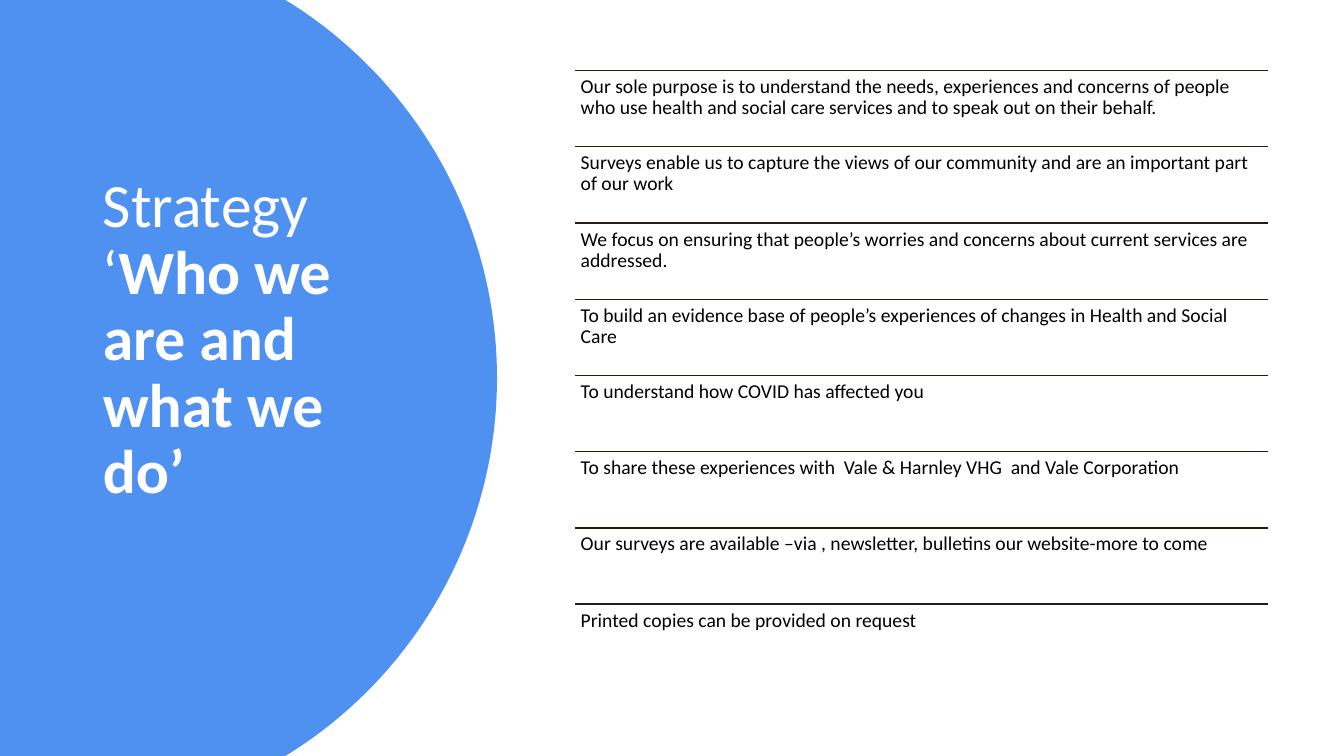
"""Build the strategy slide: title on a blue disc beside a ruled list of aims."""
import math

from lxml import etree
from pptx import Presentation
from pptx.dml.color import RGBColor
from pptx.enum.shapes import MSO_CONNECTOR
from pptx.enum.text import MSO_ANCHOR, MSO_AUTO_SIZE, PP_ALIGN
from pptx.oxml.ns import qn
from pptx.util import Pt

TITLE_RUNS = [("Strategy ‘", False), ("Who we are and what we do’", True)]
AIMS = [
    "Our sole purpose is to understand the needs, experiences and concerns of people who use health and social care services and to speak out on their behalf.",
    "Surveys enable us to capture the views of our community and are an important part of our work",
    "We focus on ensuring that people’s worries and concerns about current services are addressed.",
    "To build an evidence base of people’s experiences of changes in Health and Social Care",
    "To understand how COVID has affected you",
    "To share these experiences with  Vale & Harnley VHG  and Vale Corporation",
    "Our surveys are available –via , newsletter, bulletins our website-more to come",
    "Printed copies can be provided on request",
]
COLORS = {"disc": "4E91F0", "title": "FFFFFF", "text": "000000", "rule": "281B10"}
FONT = "Calibri"
STRAIGHT = MSO_CONNECTOR.STRAIGHT
LEFT = PP_ALIGN.LEFT
NO_FIT = MSO_AUTO_SIZE.NONE
MIDDLE, TOP = MSO_ANCHOR.MIDDLE, MSO_ANCHOR.TOP

EMU_PER_PX = 9144
SLIDE_W, SLIDE_H = 1333, 750
DISC_R, DISC_CX = 440, 53
ARC_STEPS = 80
TITLE_BOX = (92, 70, 323, 609)
TITLE_INSETS = (10, 5, 10, 78)
LIST_X, LIST_Y, LIST_W, LIST_H = 570, 70, 688, 605
ROW_INSETS = (6, 6, 6, 6)


def px(n):
    return round(n * EMU_PER_PX)


def rgb(name):
    return RGBColor.from_string(COLORS[name])


def write(tf, runs, size, color, anchor, insets):
    tf.word_wrap = True
    tf.auto_size = NO_FIT
    tf.vertical_anchor = anchor
    tf.margin_left, tf.margin_top, tf.margin_right, tf.margin_bottom = map(px, insets)
    p = tf.paragraphs[0]
    p.alignment = LEFT
    p.line_spacing = 0.9
    for text, bold in runs:
        r = p.add_run()
        r.text = text
        r.font.name = FONT
        r.font.size = Pt(size)
        r.font.bold = bold
        r.font.color.rgb = rgb(color)


def add_disc(slide):
    cy = SLIDE_H / 2
    half = math.asin(cy / DISC_R)
    angles = [half * (2 * i / ARC_STEPS - 1) for i in range(ARC_STEPS + 1)]
    arc = [(px(DISC_CX + DISC_R * math.cos(a)), px(cy + DISC_R * math.sin(a))) for a in angles]
    fb = slide.shapes.build_freeform(0, 0)
    fb.add_line_segments(arc + [(0, px(SLIDE_H))], close=True)
    sp = fb.convert_to_shape()
    sp.shadow.inherit = False
    sp.fill.solid()
    sp.fill.fore_color.rgb = rgb("disc")
    sp.line.fill.background()


def add_aim(slide, y, h, text):
    rule = slide.shapes.add_connector(STRAIGHT, px(LIST_X), px(y), px(LIST_X + LIST_W), px(y))
    rule.line.color.rgb = rgb("rule")
    rule.line.width = Pt(1)
    etree.SubElement(rule._element.spPr, qn("a:effectLst"))
    box = slide.shapes.add_textbox(px(LIST_X), px(y), px(LIST_W), px(h))
    write(box.text_frame, [(text, False)], 14, "text", TOP, ROW_INSETS)


def main():
    prs = Presentation()
    prs.slide_width, prs.slide_height = px(SLIDE_W), px(SLIDE_H)
    slide = prs.slides.add_slide(prs.slide_layouts[5])
    add_disc(slide)

    title = slide.shapes.title
    title.left, title.top, title.width, title.height = map(px, TITLE_BOX)
    write(title.text_frame, TITLE_RUNS, 44, "title", MIDDLE, TITLE_INSETS)
    slide.shapes._spTree.append(title._element)

    row_h = LIST_H / len(AIMS)
    for i, aim in enumerate(AIMS):
        add_aim(slide, LIST_Y + i * row_h, row_h, aim)
    prs.save("out.pptx")


if __name__ == "__main__":
    main()
